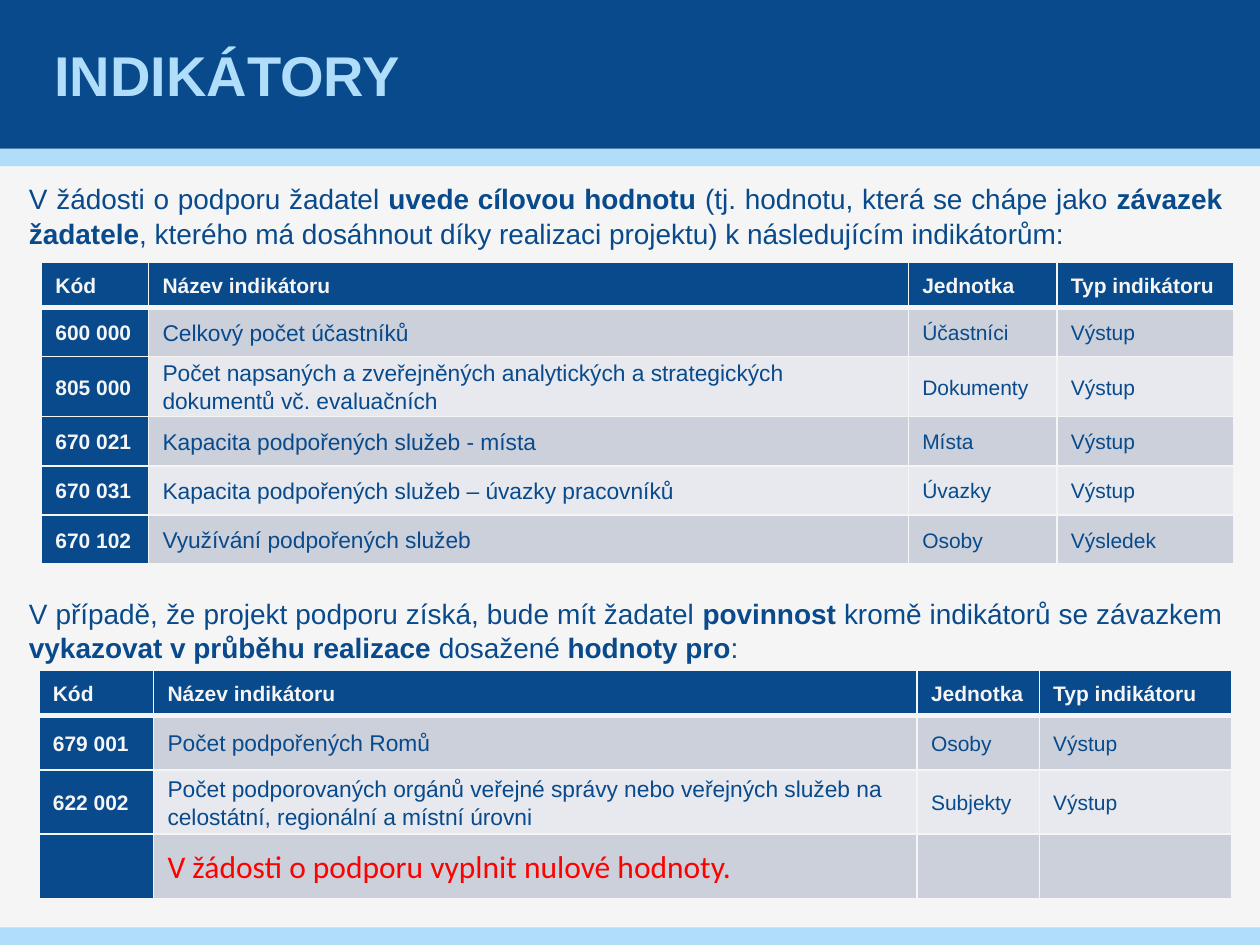
from lxml.etree import SubElement
from pptx import Presentation
from pptx.dml.color import RGBColor
from pptx.enum.shapes import MSO_SHAPE
from pptx.enum.text import MSO_ANCHOR, PP_ALIGN
from pptx.oxml.ns import qn
from pptx.util import Inches, Pt

NAVY = RGBColor(0x08, 0x4A, 0x8B)
SKY = RGBColor(0xAF, 0xDD, 0xFA)
PAPER = RGBColor(0xF5, 0xF5, 0xF5)
RED = RGBColor(0xFF, 0x00, 0x00)
BANDS = (RGBColor(0xCC, 0xD0, 0xDA), RGBColor(0xE7, 0xE9, 0xEE))

HEADER = ("Kód", "Název indikátoru", "Jednotka", "Typ indikátoru")
COMMITTED = [
    HEADER,
    ("600 000", "Celkový počet účastníků", "Účastníci", "Výstup"),
    ("805 000", "Počet napsaných a zveřejněných analytických a strategických "
     "dokumentů vč. evaluačních", "Dokumenty", "Výstup"),
    ("670 021", "Kapacita podpořených služeb - místa", "Místa", "Výstup"),
    ("670 031", "Kapacita podpořených služeb – úvazky pracovníků", "Úvazky", "Výstup"),
    ("670 102", "Využívání podpořených služeb", "Osoby", "Výsledek"),
]
REPORTED = [
    HEADER,
    ("679 001", "Počet podpořených Romů", "Osoby", "Výstup"),
    ("622 002", "Počet podporovaných orgánů veřejné správy nebo veřejných služeb na "
     "celostátní, regionální a místní úrovni", "Subjekty", "Výstup"),
    ("", "V žádosti o podporu vyplnit nulové hodnoty.", "", ""),
]
# Text pieces alternate between regular and bold
INTRO = ("V žádosti o podporu žadatel ", "uvede cílovou hodnotu ",
         "(tj. hodnotu, která se chápe jako ", "závazek žadatele",
         ", kterého má dosáhnout díky realizaci projektu) k následujícím indikátorům:")
DUTY = ("V případě, že projekt podporu získá, bude mít žadatel ", "povinnost",
        " kromě indikátorů se závazkem ", "vykazovat v průběhu realizace ",
        "dosažené ", "hodnoty pro", ":")


def apply(target, values):
    for name, value in values.items():
        setattr(target, name, value)


class IndicatorSlide:
    FONT = {"name": "Arial", "size": Pt(16), "bold": False}
    CELL = {"margin_left": Inches(0.07), "margin_right": Inches(0.07),
            "margin_top": 0, "margin_bottom": 0, "vertical_anchor": MSO_ANCHOR.MIDDLE}
    CELL_PARA = {"line_spacing": 1.1, "space_before": Pt(3), "space_after": Pt(6)}

    def __init__(self, prs):
        self.s = prs.slides.add_slide(prs.slide_layouts[5])
        fill = self.s.background.fill
        fill.solid()
        fill.fore_color.rgb = PAPER

    def run(self, p, text, color, **font):
        r = p.add_run()
        r.text = text
        apply(r.font, {**self.FONT, **font})
        r.font.color.rgb = color

    def band(self, top, height, color):
        sp = self.s.shapes.add_shape(MSO_SHAPE.RECTANGLE, 0, Inches(top),
                                     Inches(10), Inches(height))
        sp.shadow.inherit = False
        sp.fill.solid()
        sp.fill.fore_color.rgb = color
        sp.line.fill.background()

    def title(self, text):
        sp = self.s.shapes.title
        apply(sp, {"left": Inches(0.39), "top": 0,
                   "width": Inches(9.21), "height": Inches(1.18)})
        tf = sp.text_frame
        apply(tf, {"margin_left": Inches(0.04), "margin_right": Inches(0.04),
                   "margin_top": 0, "margin_bottom": 0,
                   "vertical_anchor": MSO_ANCHOR.MIDDLE})
        p = tf.paragraphs[0]
        p.alignment = PP_ALIGN.LEFT
        self.run(p, text, SKY, size=Pt(32), bold=True)
        # Bring the title in front of the bands
        self.s.shapes._spTree.append(sp._element)

    def paragraph(self, top, pieces):
        sp = self.s.shapes.add_textbox(Inches(0.23), Inches(top),
                                       Inches(9.47), Inches(0.55))
        tf = sp.text_frame
        apply(tf, {"margin_left": 0, "margin_right": 0, "margin_top": 0,
                   "margin_bottom": 0, "word_wrap": True})
        p = tf.paragraphs[0]
        apply(p, {"alignment": PP_ALIGN.JUSTIFY, "line_spacing": 1.04})
        for i, piece in enumerate(pieces):
            self.run(p, piece, NAVY, bold=i % 2 == 1)

    def borders(self, cell, row):
        widths = {"a:lnL": 1, "a:lnR": 1, "a:lnT": 3 if row == 1 else 1,
                  "a:lnB": 3 if row == 0 else 1}
        tc_pr = cell._tc.get_or_add_tcPr()
        for tag, width in widths.items():
            ln = SubElement(tc_pr, qn(tag), w=str(Pt(width)))
            fill = SubElement(ln, qn("a:solidFill"))
            SubElement(fill, qn("a:srgbClr"), val=str(PAPER))

    def cell(self, cell, row, col, text, font, color):
        apply(cell, self.CELL)
        self.borders(cell, row)
        cell.fill.solid()
        strong = row == 0 or col == 0
        cell.fill.fore_color.rgb = NAVY if strong else BANDS[(row - 1) % 2]
        if text:
            p = cell.text_frame.paragraphs[0]
            apply(p, self.CELL_PARA)
            p._p.get_or_add_pPr().set("marL", str(Inches(0.04)))
            size = Pt(13 if col == 1 and row else 12)
            self.run(p, text, PAPER if strong else color,
                     **{"size": size, "bold": strong, **font})

    def table(self, left, top, widths, heights, rows, note_row=None):
        frame = self.s.shapes.add_table(len(rows), len(widths), Inches(left), Inches(top),
                                        Inches(sum(widths)), Inches(sum(heights)))
        tbl = frame.table
        for column, width in zip(tbl.columns, widths):
            column.width = Inches(width)
        for r, (values, height) in enumerate(zip(rows, heights)):
            tbl.rows[r].height = Inches(height)
            note = r == note_row
            font = {"name": "Calibri", "size": Pt(18)} if note else {}
            for c, text in enumerate(values):
                self.cell(tbl.cell(r, c), r, c, text, font, RED if note else NAVY)


def main():
    prs = Presentation()
    apply(prs, {"slide_width": Inches(10), "slide_height": Inches(7.5)})
    slide = IndicatorSlide(prs)

    # Bands and title
    slide.band(1.18, 0.14, SKY)
    slide.band(0, 1.18, NAVY)
    slide.band(7.36, 0.14, SKY)
    slide.title("INDIKÁTORY")

    # Indicators with a committed target value
    slide.paragraph(1.43, INTRO)
    slide.table(0.33, 2.08, (0.85, 6.03, 1.18, 1.4), [0.36] + [0.39] * 5, COMMITTED)

    # Indicators that are only reported
    slide.paragraph(4.72, DUTY)
    slide.table(0.31, 5.32, (0.91, 6.06, 0.97, 1.53), (0.36, 0.43, 0.51, 0.51),
                REPORTED, note_row=3)

    prs.save("out.pptx")


if __name__ == "__main__":
    main()
